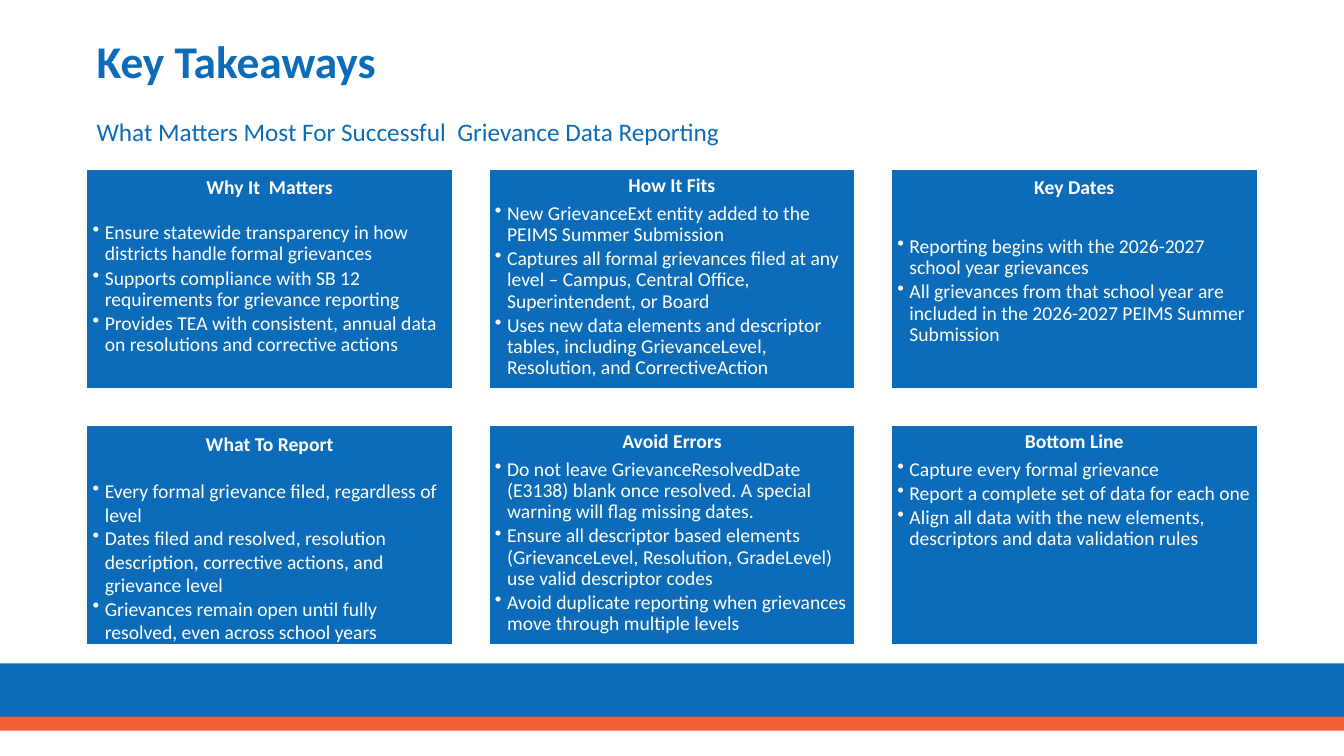
from lxml.etree import SubElement
from pptx import Presentation
from pptx.dml.color import RGBColor
from pptx.enum.shapes import MSO_SHAPE as SHAPE
from pptx.enum.text import MSO_ANCHOR as ANCHOR, PP_ALIGN as ALIGN
from pptx.oxml.ns import qn
from pptx.util import Inches, Pt

BLUE = RGBColor(0x0D, 0x6C, 0xB9)
CORAL = RGBColor(0xF1, 0x60, 0x38)
WHITE = RGBColor(0xFF, 0xFF, 0xFF)

LEFT, TOP = 0.86, 1.68
WIDTH, HEIGHT = 3.63, 2.18
COLS, GAP_X, GAP_Y = 3, 0.36, 0.36

TIGHT = {"line_spacing": 0.9, "space_after": Pt(2.1)}
LOOSE = {"line_spacing": 1.0, "space_after": Pt(0)}
CLOSE = {"line_spacing": 0.9, "space_after": Pt(4.9)}
APART = {"line_spacing": 1.0, "space_after": Pt(17.1)}
WIDE = {"line_spacing": 1.0, "space_after": Pt(26.9)}

CARDS = [
    ("Why It  Matters", APART, TIGHT, [
        "Ensure statewide transparency in how districts handle formal grievances",
        "Supports compliance with SB 12 requirements for grievance reporting",
        "Provides TEA with consistent, annual data on resolutions and corrective actions",
    ]),
    ("How It Fits", CLOSE, TIGHT, [
        "New GrievanceExt entity added to the PEIMS Summer Submission",
        "Captures all formal grievances filed at any level – Campus, Central Office, "
        "Superintendent, or Board",
        "Uses new data elements and descriptor tables, including GrievanceLevel, "
        "Resolution, and CorrectiveAction",
    ]),
    ("Key Dates", WIDE, TIGHT, [
        "Reporting begins with the 2026-2027 school year grievances",
        "All grievances from that school year are included in the 2026-2027 PEIMS "
        "Summer Submission",
    ]),
    ("What To Report", APART, LOOSE, [
        "Every formal grievance filed, regardless of level",
        "Dates filed and resolved, resolution description, corrective actions, "
        "and grievance level",
        "Grievances remain open until fully resolved, even across school years",
    ]),
    ("Avoid Errors", CLOSE, TIGHT, [
        "Do not leave GrievanceResolvedDate (E3138) blank once resolved. A special "
        "warning will flag missing dates.",
        "Ensure all descriptor based elements (GrievanceLevel, Resolution, GradeLevel) "
        "use valid descriptor codes",
        "Avoid duplicate reporting when grievances move through multiple levels",
    ]),
    ("Bottom Line", CLOSE, TIGHT, [
        "Capture every formal grievance",
        "Report a complete set of data for each one",
        "Align all data with the new elements, descriptors and data validation rules",
    ]),
]


def style(item, form):
    for name, value in form.items():
        setattr(item, name, value)


def write(para, text, size, color, bold=False):
    run = para.add_run()
    run.text = text
    style(run.font, {"name": "Calibri", "size": Pt(size), "bold": bold})
    run.font.color.rgb = color


def bullet(para):
    props = para._p.get_or_add_pPr()
    props.set("marL", str(Inches(0.12)))
    props.set("indent", str(Inches(-0.12)))
    SubElement(props, qn("a:buChar")).set("char", "•")


def block(slide, box, color):
    shape = slide.shapes.add_shape(SHAPE.RECTANGLE, *map(Inches, box))
    shape.shadow.inherit = False
    shape.fill.solid()
    shape.fill.fore_color.rgb = color
    shape.line.fill.background()
    return shape


def label(slide, box, text, size, bold=False):
    frame = slide.shapes.add_textbox(*map(Inches, box)).text_frame
    style(frame, {"word_wrap": True, "vertical_anchor": ANCHOR.MIDDLE})
    write(frame.paragraphs[0], text, size, BLUE, bold)


def card(slide, box, head, lead, body, points):
    shape = block(slide, box, BLUE)
    shape.line.color.rgb = WHITE
    shape.line.width = Pt(1)
    frame = shape.text_frame
    sides = ("left", "top", "right", "bottom")
    style(frame, {f"margin_{side}": Inches(0.06) for side in sides})
    style(frame, {"word_wrap": True, "vertical_anchor": ANCHOR.TOP})
    para = frame.paragraphs[0]
    style(para, {"alignment": ALIGN.CENTER, **lead})
    write(para, head, 14, WHITE, True)
    for point in points:
        para = frame.add_paragraph()
        bullet(para)
        style(para, {"alignment": ALIGN.LEFT, **body})
        write(para, point, 14, WHITE)


def main():
    deck = Presentation()
    style(deck, {"slide_width": Inches(13.33), "slide_height": Inches(7.5)})
    slide = deck.slides.add_slide(deck.slide_layouts[6])
    block(slide, (0, 6.58, 13.33, 0.58), BLUE)
    block(slide, (0, 7.11, 13.33, 0.14), CORAL)
    label(slide, (LEFT, 0.19, 12.16, 0.82), "Key Takeaways", 32.4, True)
    for index, entry in enumerate(CARDS):
        row, col = divmod(index, COLS)
        left = LEFT + col * (WIDTH + GAP_X)
        top = TOP + row * (HEIGHT + GAP_Y)
        card(slide, (left, top, WIDTH, HEIGHT), *entry)
    label(slide, (LEFT, 1.1, 8.64, 0.4),
          "What Matters Most For Successful  Grievance Data Reporting", 18)
    deck.save("out.pptx")


if __name__ == "__main__":
    main()
